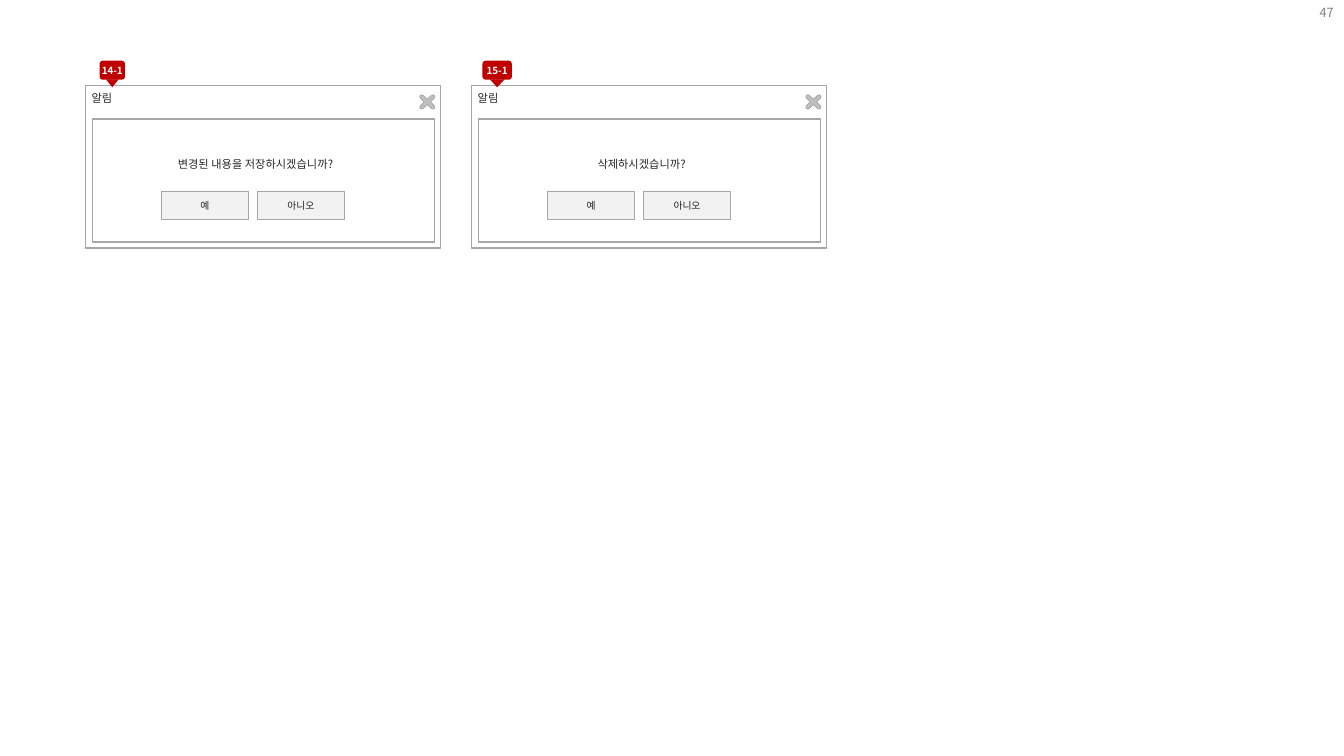
from dataclasses import dataclass

from lxml import etree
from pptx import Presentation
from pptx.dml.color import RGBColor
from pptx.enum.shapes import MSO_SHAPE
from pptx.enum.text import MSO_ANCHOR, PP_ALIGN
from pptx.oxml.ns import qn
from pptx.shapes.autoshape import Shape
from pptx.util import Cm, Pt

RECT = MSO_SHAPE.RECTANGLE
ROUND = MSO_SHAPE.ROUNDED_RECTANGLE
POINT = MSO_SHAPE.ISOSCELES_TRIANGLE
TOP, MIDDLE = MSO_ANCHOR.TOP, MSO_ANCHOR.MIDDLE
LEFT, CENTER, RIGHT = PP_ALIGN.LEFT, PP_ALIGN.CENTER, PP_ALIGN.RIGHT

WHITE = RGBColor(0xFF, 0xFF, 0xFF)
PALE = RGBColor(0xF2, 0xF2, 0xF2)
SILVER = RGBColor(0xBF, 0xBF, 0xBF)
EDGE = RGBColor(0xA6, 0xA6, 0xA6)
GRAY = RGBColor(0x80, 0x80, 0x80)
INK = RGBColor(0x26, 0x26, 0x26)
RED = RGBColor(0xC0, 0x00, 0x00)

FONT = "Noto Sans CJK KR"
ANSWERS = ("예", "아니오")
CROSS_ARM = ((0, -0.07), (0.1, -0.16), (0.14, -0.18), (0.18, -0.16),
             (0.19, -0.13), (0.18, -0.1), (0.08, 0))


@dataclass(frozen=True)
class Dialog:
    left: float
    label: str
    middle: float
    width: float
    question: str


DIALOGS = (
    Dialog(2.16, "14-1", 2.83, 0.64, "변경된 내용을 저장하시겠습니까?"),
    Dialog(11.89, "15-1", 12.53, 0.74, "삭제하시겠습니까?"),
)


def write(shape: Shape, text: str, *, size: float = 8, color: RGBColor = INK,
          bold: bool = False, align: PP_ALIGN = CENTER,
          anchor: MSO_ANCHOR = MIDDLE, wrap: bool = True,
          inset: tuple[float, float] = (0.15, 0.08)) -> None:
    frame = shape.text_frame
    frame.word_wrap = wrap
    frame.vertical_anchor = anchor
    frame.margin_left = frame.margin_right = Cm(inset[0])
    frame.margin_top = frame.margin_bottom = Cm(inset[1])
    para = frame.paragraphs[0]
    para.alignment = align
    run = para.add_run()
    run.text = text
    font = run.font
    font.name, font.size, font.bold = FONT, Pt(size), bold
    font.color.rgb = color
    etree.SubElement(run._r.get_or_add_rPr(), qn("a:ea"), typeface=FONT)


def paint(shape: Shape, fill: RGBColor, line: float = 0) -> None:
    shape.shadow.inherit = False
    shape.fill.solid()
    shape.fill.fore_color.rgb = fill
    if line:
        shape.line.color.rgb = EDGE
        shape.line.width = Pt(line)
    else:
        shape.line.fill.background()


def add_box(shapes, kind: MSO_SHAPE, left: float, top: float, width: float,
            height: float, fill: RGBColor, line: float = 0) -> Shape:
    shape = shapes.add_shape(kind, Cm(left), Cm(top), Cm(width), Cm(height))
    paint(shape, fill, line)
    return shape


def add_text(shapes, left: float, top: float, width: float,
             height: float) -> Shape:
    return shapes.add_textbox(Cm(left), Cm(top), Cm(width), Cm(height))


def add_cross(shapes, x: float, y: float) -> None:
    back = CROSS_ARM[::-1]
    turns = ((1, 1, CROSS_ARM), (1, -1, back),
             (-1, -1, CROSS_ARM), (-1, 1, back))
    points = [(Cm(x + h * dx), Cm(y + v * dy))
              for h, v, arm in turns for dx, dy in arm[:-1]]
    pen = shapes.build_freeform(*points[0])
    pen.add_line_segments(points[1:], close=True)
    paint(pen.convert_to_shape(), SILVER, 0.5)


def add_badge(shapes, item: Dialog) -> None:
    tip = item.width / 2
    arrow = add_box(shapes, POINT, item.middle - tip / 2, 2, tip, 0.2, RED)
    arrow.rotation = 180
    badge = add_box(shapes, ROUND, item.middle - tip, 1.53,
                    item.width, 0.48, RED)
    write(badge, item.label, size=7, color=WHITE, bold=True,
          wrap=False, inset=(0, 0))


def add_dialog(shapes, item: Dialog) -> None:
    left = item.left
    add_box(shapes, RECT, left, 2.16, 8.94, 4.09, WHITE, 1)
    add_box(shapes, RECT, left + 0.18, 3, 8.61, 3.1, WHITE, 0.75)
    for i, answer in enumerate(ANSWERS):
        button = add_box(shapes, RECT, left + 1.9 + 2.42 * i, 4.83,
                         2.21, 0.69, PALE, 0.5)
        write(button, answer, size=7, wrap=False)
    add_cross(shapes, left + 8.61, 2.57)
    write(add_text(shapes, left + 0.28, 3.43, 8, 1.4), item.question)
    write(add_text(shapes, left, 2.21, 1.2, 0.53), "알림",
          align=LEFT, anchor=TOP)
    add_badge(shapes, item)


def main() -> None:
    deck = Presentation()
    deck.slide_width, deck.slide_height = Cm(33.87), Cm(19.05)
    shapes = deck.slides.add_slide(deck.slide_layouts[6]).shapes
    write(add_text(shapes, 26.24, -0.2, 7.62, 1.02), "47", size=9,
          color=GRAY, align=RIGHT, inset=(0.25, 0.13))
    for item in DIALOGS:
        add_dialog(shapes, item)
    deck.save("out.pptx")


if __name__ == "__main__":
    main()
